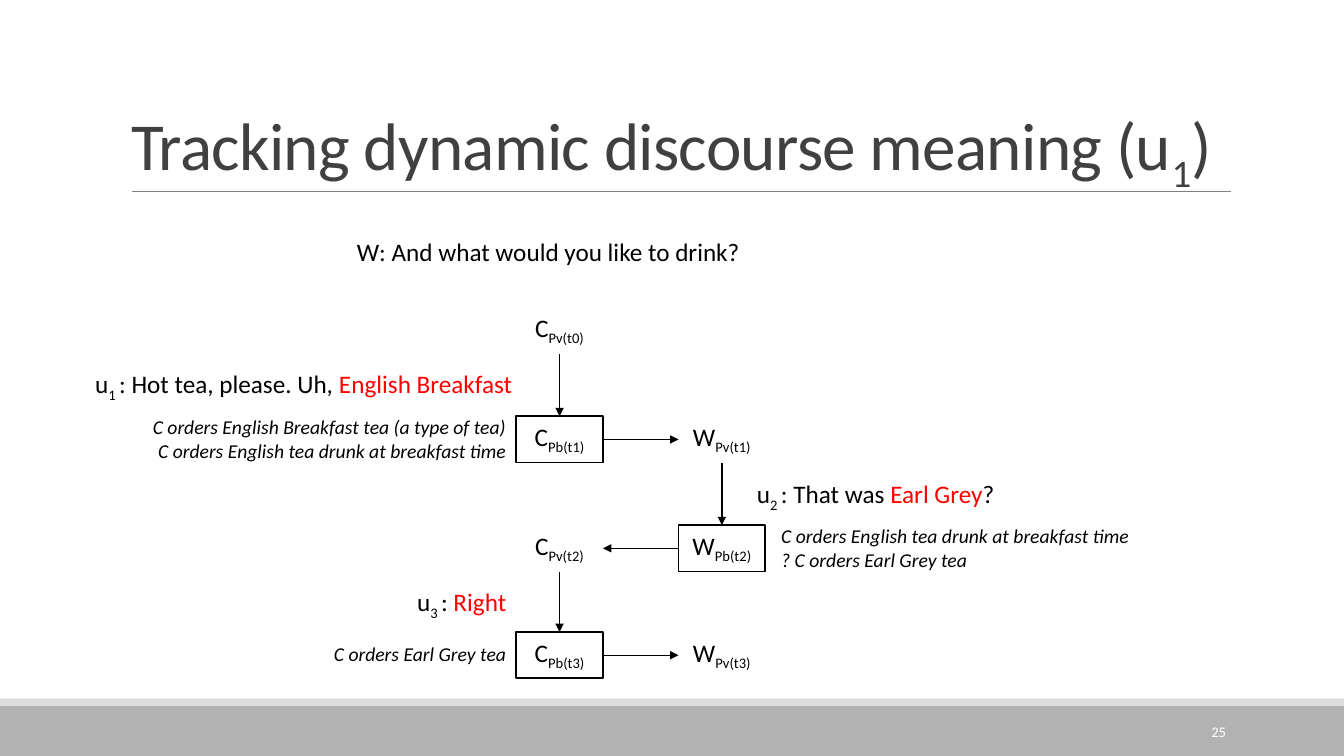
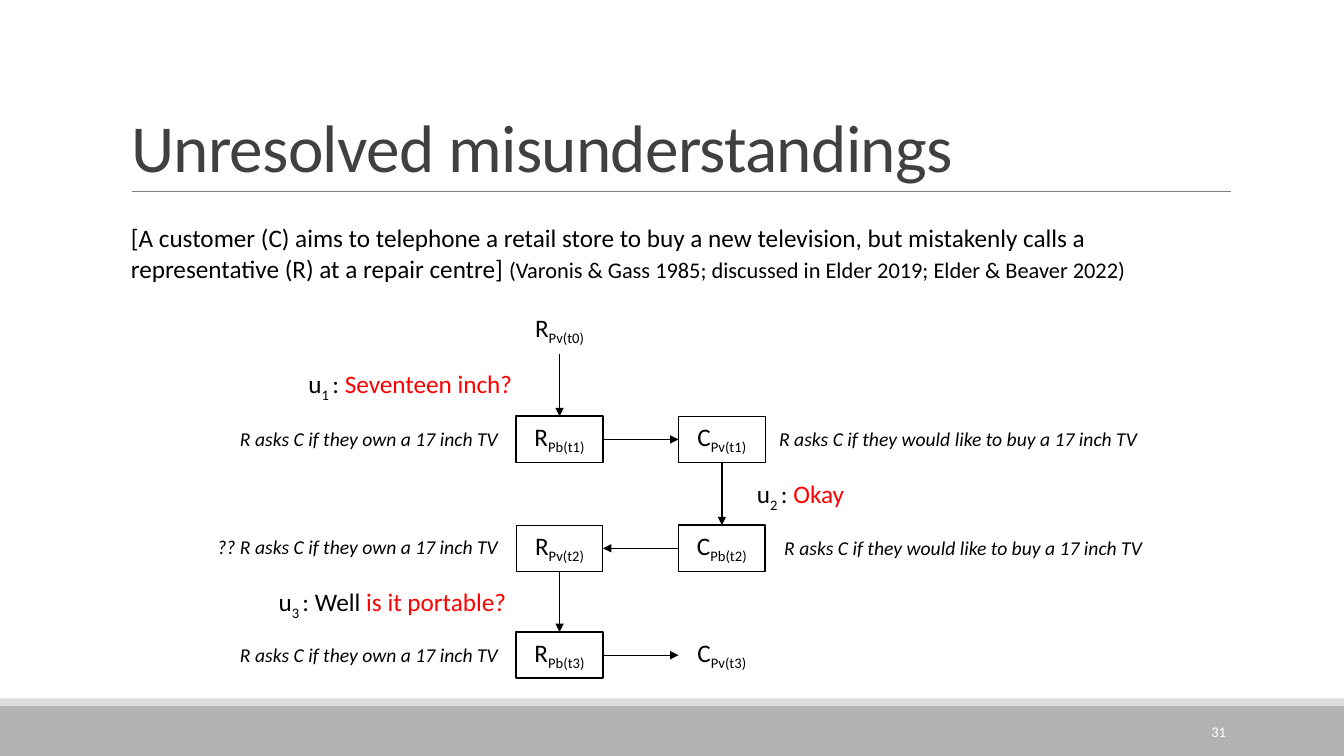
from dataclasses import dataclass
from itertools import pairwise
from typing import Optional

from lxml.etree import SubElement
from pptx import Presentation
from pptx.dml.color import RGBColor
from pptx.enum.shapes import MSO_CONNECTOR, MSO_SHAPE
from pptx.enum.text import MSO_ANCHOR, MSO_AUTO_SIZE, PP_ALIGN
from pptx.oxml.ns import qn
from pptx.util import Inches, Pt


@dataclass(frozen=True)
class Theme:
    font: str = "Calibri"
    ink: str = "000000"
    accent: str = "FF0000"
    paper: str = "FFFFFF"
    title: str = "404040"
    rule: str = "808080"
    band: str = "B2B2B2"
    band_edge: str = "DDDDDD"
    title_size: float = 48
    text_size: float = 18
    source_size: float = 16
    note_size: float = 14
    number_size: float = 10.5


@dataclass(frozen=True)
class Span:
    text: str
    color: Optional[str] = None
    size: Optional[float] = None
    subscript: bool = False


THEME = Theme()
COLUMNS = (5.12, 6.73)
ROWS = (3.05, 4.13, 5.21, 6.27)
NODE_SIZE = (0.86, 0.46)
TOP, LEFT, BOTTOM, RIGHT = range(4)
LABEL_WIDTH = 4.6
STEPS = (
    (0, 0, "Pv(t0)"),
    (0, 1, "Pb(t1)"),
    (1, 1, "Pv(t1)"),
    (1, 2, "Pb(t2)"),
    (0, 2, "Pv(t2)"),
    (0, 3, "Pb(t3)"),
    (1, 3, "Pv(t3)"),
)


def sub(text):
    return Span(text, subscript=True)


def red(text):
    return Span(text, color=THEME.accent)


def rgb(value):
    return RGBColor.from_string(value)


def write(frame, *paragraphs, size=THEME.text_size, color=THEME.ink, italic=False,
          align=PP_ALIGN.LEFT, anchor=MSO_ANCHOR.TOP, line_spacing=1.0, tracking=0):
    frame.word_wrap = True
    frame.auto_size = MSO_AUTO_SIZE.NONE
    frame.vertical_anchor = anchor
    for index, spans in enumerate(paragraphs):
        para = frame.add_paragraph() if index else frame.paragraphs[0]
        para.alignment = align
        para.line_spacing = line_spacing
        para.space_before = para.space_after = Pt(0)
        for span in [spans] if isinstance(spans, str) else spans:
            span = Span(span) if isinstance(span, str) else span
            run = para.add_run()
            run.text = span.text
            run.font.name = THEME.font
            run.font.size = Pt(span.size or size)
            run.font.italic = italic
            run.font.color.rgb = rgb(span.color or color)
            properties = run._r.get_or_add_rPr()
            if tracking:
                properties.set("spc", str(int(tracking * 100)))
            if span.subscript:
                properties.set("baseline", "-25000")


def add_text(page, at, *paragraphs, **style):
    box = page.shapes.add_textbox(*map(Inches, at))
    write(box.text_frame, *paragraphs, **style)


def add_rectangle(page, at, fill=None, line_width=0):
    box = page.shapes.add_shape(MSO_SHAPE.RECTANGLE, *map(Inches, at))
    box.shadow.inherit = False
    if fill:
        box.fill.solid()
        box.fill.fore_color.rgb = rgb(fill)
    else:
        box.fill.background()
    if line_width:
        box.line.color.rgb = rgb(THEME.ink)
        box.line.width = Pt(line_width)
    else:
        box.line.fill.background()
    return box


def add_line(page, start, end, color=THEME.ink, width=1, arrow=False):
    line = page.shapes.add_connector(MSO_CONNECTOR.STRAIGHT, *map(Inches, start + end))
    line.line.color.rgb = rgb(color)
    line.line.width = Pt(width)
    properties = line.element.spPr
    if arrow:
        SubElement(properties.find(qn("a:ln")), qn("a:tailEnd"), type="triangle")
    SubElement(properties, qn("a:effectLst"))
    return line


def add_arrow(page, source, target, source_side, target_side):
    arrow = add_line(page, (0, 0), (0, 0), arrow=True)
    arrow.begin_connect(source, source_side)
    arrow.end_connect(target, target_side)


def add_node(page, column, row, speaker, state, outlined):
    at = (COLUMNS[column], ROWS[row], *NODE_SIZE)
    if state.startswith("Pb"):
        box = add_rectangle(page, at, fill=THEME.paper, line_width=1.25)
    else:
        box = add_rectangle(page, at, line_width=0.75 if state in outlined else 0)
    write(box.text_frame, [speaker, sub(state)], align=PP_ALIGN.CENTER)
    return box


def add_chain(page, speakers, outlined=()):
    nodes = [
        (column, row, add_node(page, column, row, speakers[column], state, outlined))
        for column, row, state in STEPS
    ]
    for (column, row, source), (next_column, next_row, target) in pairwise(nodes):
        if next_row > row:
            sides = BOTTOM, TOP
        elif next_column > column:
            sides = RIGHT, LEFT
        else:
            sides = LEFT, RIGHT
        add_arrow(page, source, target, *sides)


def add_label(page, edge, top, *paragraphs, before=False, **style):
    left = edge - LABEL_WIDTH if before else edge
    align = PP_ALIGN.RIGHT if before else PP_ALIGN.LEFT
    height = 0.4 + 0.24 * (len(paragraphs) - 1)
    add_text(page, (left, top, LABEL_WIDTH, height), *paragraphs, align=align, **style)


def add_utterances(page, first, second, third):
    add_label(page, 5.18, 3.61, ["u", sub("1 "), ": ", *first], before=True)
    add_label(page, 7.41, 4.7, ["u", sub("2 "), ": ", *second])
    add_label(page, 5.12, 5.77, ["u", sub("3 "), ": ", *third], before=True)


def add_note(page, edge, top, *lines, before=False):
    add_label(page, edge, top, *lines, before=before, size=THEME.note_size, italic=True)


def prepare_layout(layout, page):
    for holder in list(layout.placeholders)[1:]:
        holder.element.getparent().remove(holder.element)
    title = layout.placeholders[0]
    title.left, title.top, title.width, title.height = map(Inches, (1.2, 0.31, 11, 1.59))
    shared = (
        add_rectangle(page, (0, 7, 13.33, 0.5), fill=THEME.band),
        add_rectangle(page, (0, 6.93, 13.33, 0.07), fill=THEME.band_edge),
        add_line(page, (1.31, 1.9), (12.21, 1.9), color=THEME.rule, width=0.5),
    )
    for shape in shared:
        layout.shapes.element.append(shape.element)


def add_heading(page, title, number):
    write(page.shapes.title.text_frame, title, size=THEME.title_size, color=THEME.title,
          anchor=MSO_ANCHOR.BOTTOM, line_spacing=0.85, tracking=-0.5)
    add_text(page, (10.83, 7.06, 1.43, 0.4), number, size=THEME.number_size,
             color=THEME.paper, align=PP_ALIGN.RIGHT, anchor=MSO_ANCHOR.MIDDLE)


def build_tracking(page):
    add_heading(page, ["Tracking dynamic discourse meaning (u", sub("1"), ")"], "25")
    add_text(page, (3.44, 2.29, 4.21, 0.71), "W: And what would you like to drink?")
    add_chain(page, "CW")
    add_utterances(
        page,
        ["Hot tea, please. Uh, ", red("English Breakfast")],
        ["That was ", red("Earl Grey"), "?"],
        [red("Right")],
    )
    add_note(page, 5.12, 4.07, "C orders English Breakfast tea (a type of tea)",
             "C orders English tea drunk at breakfast time", before=True)
    add_note(page, 7.65, 5.15, "C orders English tea drunk at breakfast time",
             "? C orders Earl Grey tea")
    add_note(page, 5.12, 6.32, "C orders Earl Grey tea", before=True)


def build_unresolved(page):
    add_heading(page, "Unresolved misunderstandings", "31")
    add_text(page, (1.2, 2.16, 11, 1.01), [
        "[A customer (C) aims to telephone a retail store to buy a new television, "
        "but mistakenly calls a representative (R) at a repair centre] ",
        Span("(Varonis & Gass 1985; discussed in Elder 2019; Elder & Beaver 2022)",
             size=THEME.source_size),
    ])
    add_chain(page, "RC", outlined=("Pv(t1)", "Pv(t2)"))
    add_utterances(
        page,
        [red("Seventeen inch?")],
        [red("Okay")],
        ["Well ", red("is it portable?")],
    )
    own = "R asks C if they own a 17 inch TV"
    for top, doubt in ((4.19, ""), (5.26, "?? "), (6.33, "")):
        add_note(page, 5.04, top, doubt + own, before=True)
    for left, top in ((7.63, 4.19), (7.68, 5.27)):
        add_note(page, left, top, "R asks C if they would like to buy a 17 inch TV")


def main():
    deck = Presentation()
    deck.slide_width, deck.slide_height = Inches(13.33), Inches(7.5)
    layout = deck.slide_layouts[5]
    pages = [deck.slides.add_slide(layout) for _ in range(2)]
    prepare_layout(layout, pages[0])
    for build, page in zip((build_tracking, build_unresolved), pages):
        build(page)
    deck.save("out.pptx")


if __name__ == "__main__":
    main()
